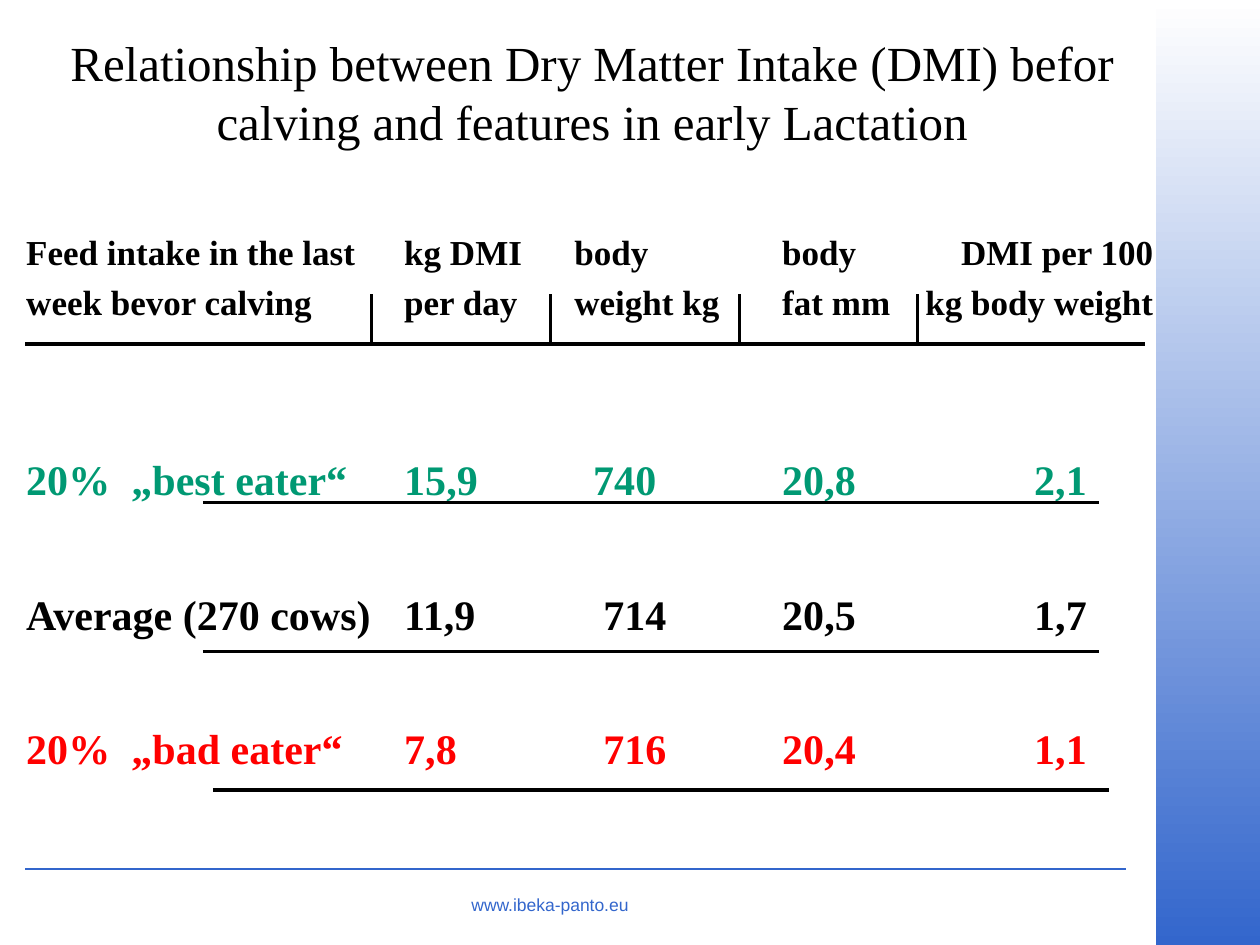
from lxml.etree import SubElement
from pptx import Presentation
from pptx.dml.color import RGBColor
from pptx.enum.shapes import MSO_CONNECTOR, MSO_SHAPE
from pptx.enum.text import PP_ALIGN
from pptx.oxml.ns import qn
from pptx.util import Inches, Pt

COLORS = {"black": "000000", "white": "FFFFFF", "blue": "3366CC", "green": "009973", "red": "FF0000"}
COLUMNS, ROWS = 100, 75
SERIF, SANS = "Times New Roman", "Arial"


class SlideBuilder:
    """Draws styled elements on a slide, placed by grid columns and rows."""

    def __init__(self, presentation):
        self.column = presentation.slide_width / COLUMNS
        self.row = presentation.slide_height / ROWS
        self.slide = presentation.slides.add_slide(presentation.slide_layouts[6])

    def place(self, *lengths):
        units = (self.column, self.row) * 2
        return [round(length * unit) for length, unit in zip(lengths, units)]

    def color(self, name):
        return RGBColor.from_string(COLORS[name])

    def band(self, left, top, width, height, start, end):
        shape = self.slide.shapes.add_shape(MSO_SHAPE.RECTANGLE, *self.place(left, top, width, height))
        shape.shadow.inherit = False
        shape.line.fill.background()
        shape.fill.gradient()
        shape.fill.gradient_angle = 270
        for stop, name in zip(shape.fill.gradient_stops, (start, end)):
            stop.color.rgb = self.color(name)

    def line(self, left, top, right, bottom, width=2, color="black"):
        connector = self.slide.shapes.add_connector(
            MSO_CONNECTOR.STRAIGHT, *self.place(left, top, right, bottom))
        connector.line.color.rgb = self.color(color)
        connector.line.width = Pt(width)
        SubElement(connector._element.spPr, qn("a:effectLst"))

    def text_frame(self, left, top, width, height, wrap=True):
        box = self.slide.shapes.add_textbox(*self.place(left, top, width, height))
        box.text_frame.word_wrap = wrap
        return box.text_frame

    def paragraph(self, frame, text, size, color="black", font=SERIF, bold=False,
                  align=PP_ALIGN.LEFT, spacing=1, before=0, tabs=()):
        paragraph = frame.add_paragraph() if frame.text else frame.paragraphs[0]
        paragraph.text = text
        paragraph.alignment = align
        paragraph.line_spacing = spacing
        paragraph.space_before = Pt(before)
        if tabs:
            tab_list = SubElement(paragraph._p.get_or_add_pPr(), qn("a:tabLst"))
            for position, side in tabs:
                SubElement(tab_list, qn("a:tab"), pos=str(round(position * self.column)), algn=side)
        paragraph.font.name = font
        paragraph.font.size = Pt(size)
        paragraph.font.bold = bold
        paragraph.font.color.rgb = self.color(color)


def main():
    presentation = Presentation()
    presentation.slide_width, presentation.slide_height = Inches(10), Inches(7.5)
    builder = SlideBuilder(presentation)

    builder.band(91.75, 0, 8.25, ROWS, "white", "blue")
    builder.line(2, 69, 89.4, 69, 1.25, "blue")
    footer = builder.text_frame(36.3, 70.5, 14.7, 2.7, wrap=False)
    builder.paragraph(footer, "www.ibeka-panto.eu", 10, "blue", SANS, align=PP_ALIGN.CENTER)

    title = builder.text_frame(2, 2.1, 90, 12.5)
    builder.paragraph(
        title,
        "Relationship between Dry Matter Intake (DMI) befor calving and features in early Lactation",
        28, align=PP_ALIGN.CENTER)

    body = builder.text_frame(1.1, 17.8, 92.2, 48)
    header_tabs = [(30, "l"), (43.5, "l"), (60, "l"), (89.45, "r")]
    headers = [
        ("Feed intake in the last", "kg DMI", "body", "body", "DMI per 100"),
        ("week bevor calving", "per day", "weight kg", "fat mm", "kg body weight"),
    ]
    for index, cells in enumerate(headers):
        builder.paragraph(body, "\t".join(cells), 20, bold=True, before=4.5 * index, tabs=header_tabs)

    groups = [
        (("20%", "„best eater“", "15,9", "740", "20,8", "2,1"), "green", 45, 32),
        (("Average (270 cows)", "11,9", "714", "20,5", "1,7"), "black", 45.8, 4.8),
        (("20%", "„bad eater“", "7,8", "716", "20,4", "1,1"), "red", 45.8, 4.8),
    ]
    for cells, color, weight_tab, before in groups:
        tabs = [(position, "l") for position in (8.35, 30, weight_tab, 60, 80)]
        builder.paragraph(body, "\t".join(cells), 24, color, bold=True,
                          spacing=2.5, before=before, tabs=tabs)

    builder.line(2, 27.3, 90.9, 27.3, 2.25)
    for left in (29.5, 43.7, 58.7, 72.8):
        builder.line(left, 23.35, left, 27.3)
    for left, top in ((16.1, 39.9), (16.1, 51.7), (16.9, 62.7)):
        builder.line(left, top, left + 71.1, top)

    presentation.save("out.pptx")


if __name__ == "__main__":
    main()
